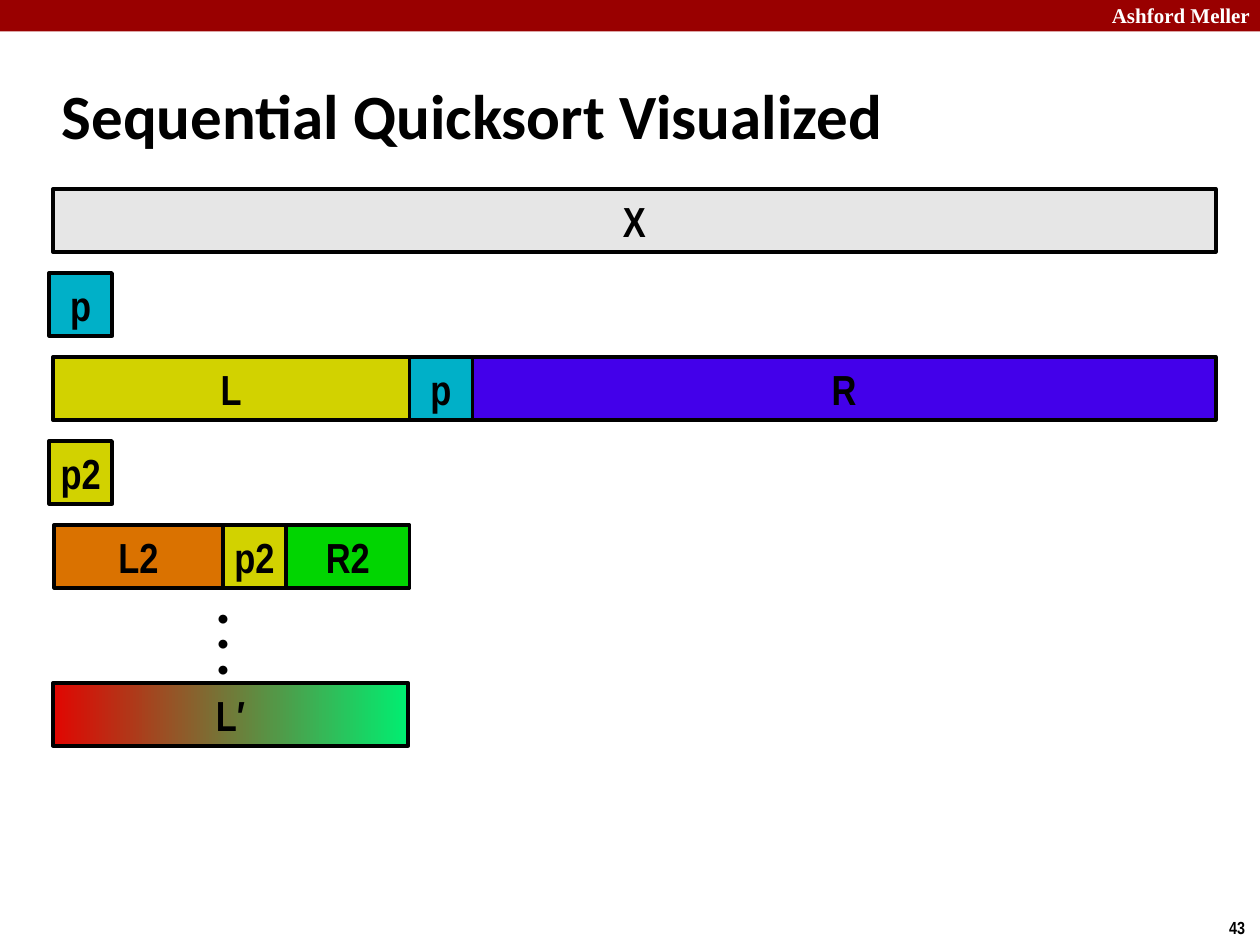
from pptx import Presentation, util as u
from pptx.dml.color import RGBColor
from pptx.enum import shapes, text

COLORS = {
    "banner": "990000", "white": "FFFFFF", "ink": "000000",
    "array": "E6E6E6", "pivot": "00B0C8", "left": "D2D200", "right": "4300EA",
    "left2": "DA7200", "right2": "01D501",
    "sorted_low": "E10601", "sorted_high": "00EE71",
}
LEFT, TOP = 0.42, 1.5
CELL = 0.5           # height of every bar, and side of a pivot
PITCH = CELL * 4 / 3
PIVOT_LEFT = 0.39


def rgb(name):
    return RGBColor.from_string(COLORS[name])


def inches(*lengths):
    return [u.Inches(n) for n in lengths]


def row_top(row):
    return TOP + row * PITCH


def format_text(tf, size, font, color="ink", align=text.PP_ALIGN.LEFT):
    for p in tf.paragraphs:
        p.alignment = align
        for r in p.runs:
            r.font.size = u.Pt(size)
            r.font.name = font
            r.font.bold = True
            r.font.color.rgb = rgb(color)


def add_label(parent, box, label, size, font, **style):
    tf = parent.add_textbox(*inches(*box)).text_frame
    tf.text = label
    tf.word_wrap = False
    format_text(tf, size, font, **style)


def add_bar(parent, left, top, width, label, *fills):
    """Add a labelled bar; two fills make a left-to-right gradient."""
    sp = parent.add_shape(shapes.MSO_SHAPE.RECTANGLE,
                          *inches(left, top, width, CELL))
    sp.shadow.inherit = False
    if len(fills) > 1:
        sp.fill.gradient()
        sp.fill.gradient_angle = 0
        for stop, name in zip(sp.fill.gradient_stops, fills):
            stop.color.rgb = rgb(name)
    else:
        sp.fill.solid()
        sp.fill.fore_color.rgb = rgb(fills[0])
    sp.line.color.rgb = rgb("ink")
    sp.line.width = u.Pt(2)
    tf = sp.text_frame
    tf.text = label
    tf.word_wrap = False
    tf.vertical_anchor = text.MSO_ANCHOR.MIDDLE
    format_text(tf, 24, "Arial Narrow", align=text.PP_ALIGN.CENTER)


def add_partition(slide, left, row, parts):
    """Add adjoining bars as one group, from (width, label, fill) parts."""
    group = slide.shapes.add_group_shape()
    for width, label, fill in parts:
        add_bar(group.shapes, left, row_top(row), width, label, fill)
        left += width


def add_frame(slide):
    banner = slide.shapes.add_shape(shapes.MSO_SHAPE.RECTANGLE,
                                    *inches(0, 0, 10, 0.25))
    banner.shadow.inherit = False
    banner.fill.solid()
    banner.fill.fore_color.rgb = rgb("banner")
    banner.line.fill.background()
    add_label(slide.shapes, (8.59, -0.03, 1.43, 0.3), "Ashford Meller", 12,
              "Times New Roman", color="white", align=text.PP_ALIGN.RIGHT)
    add_label(slide.shapes, (9.64, 7.23, 0.34, 0.27), "43", 10,
              "Arial Narrow", align=text.PP_ALIGN.RIGHT)


def set_title(slide, title):
    sp = slide.shapes.title
    sp.left, sp.top, sp.width, sp.height = inches(0.39, 0.49, 8.3, 0.83)
    tf = sp.text_frame
    tf.text = title
    tf.vertical_anchor = text.MSO_ANCHOR.MIDDLE
    format_text(tf, 36, "Calibri")


def add_sorted_result(slide):
    group = slide.shapes.add_group_shape()
    add_label(group.shapes, (1.63, 4.75, 0.28, 0.71), "•\n•\n•", 12, "Calibri")
    add_bar(group.shapes, LEFT, 5.42, 2.82, "L′", "sorted_low", "sorted_high")


def main():
    prs = Presentation()
    prs.slide_width, prs.slide_height = inches(10, 7.5)
    slide = prs.slides.add_slide(prs.slide_layouts[5])
    add_frame(slide)
    set_title(slide, "Sequential Quicksort Visualized")

    add_bar(slide.shapes, LEFT, row_top(0), 9.23, "X", "array")
    add_bar(slide.shapes, PIVOT_LEFT, row_top(1), CELL, "p", "pivot")
    add_partition(slide, LEFT, 2, [(2.83, "L", "left"), (CELL, "p", "pivot"),
                                   (5.9, "R", "right")])
    add_bar(slide.shapes, PIVOT_LEFT, row_top(3), CELL, "p2", "left")
    add_partition(slide, 0.43, 4, [(1.34, "L2", "left2"), (CELL, "p2", "left"),
                                   (0.98, "R2", "right2")])
    add_sorted_result(slide)
    prs.save("out.pptx")


if __name__ == "__main__":
    main()
